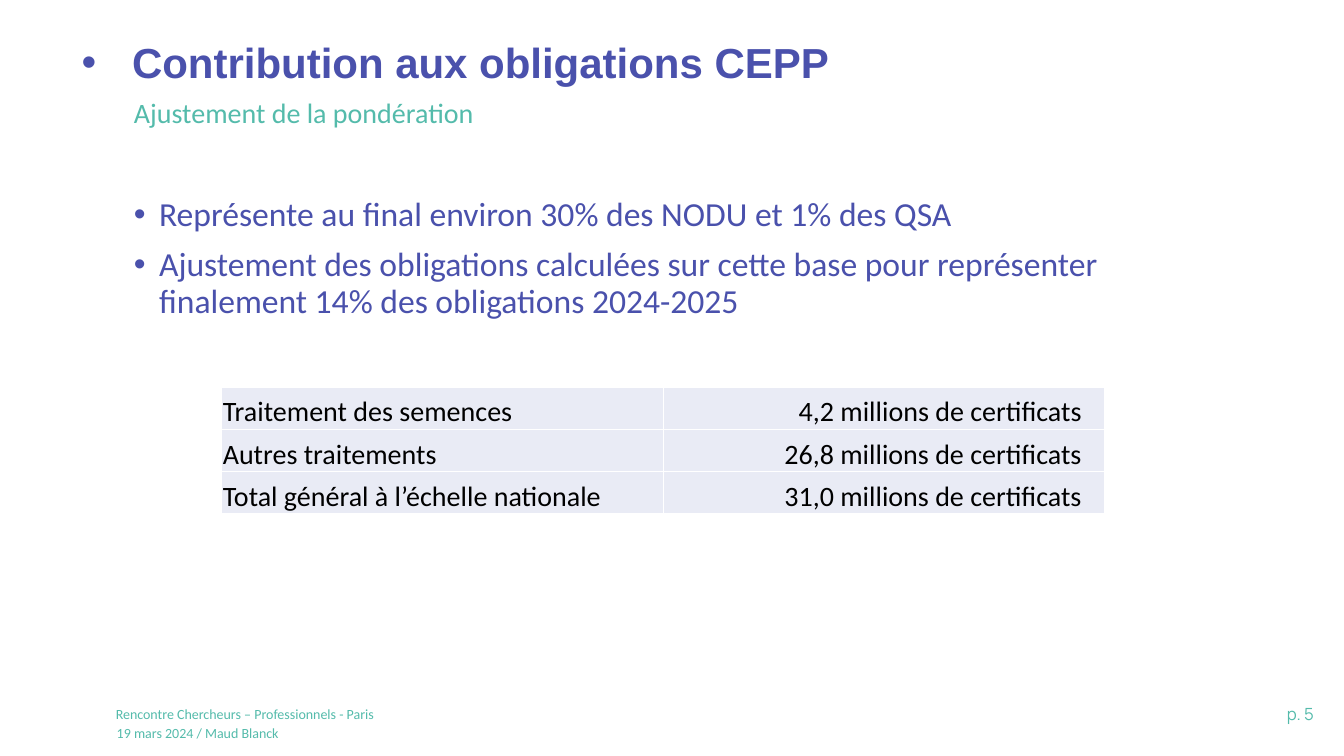
from lxml.etree import SubElement
from pptx import Presentation
from pptx.dml.color import RGBColor
from pptx.enum.text import MSO_ANCHOR as Anchor, PP_ALIGN as Align
from pptx.oxml.ns import qn
from pptx.util import Inches, Pt

INDIGO = RGBColor(0x4A, 0x51, 0xAC)
TEAL = RGBColor(0x54, 0xBB, 0xAB)
BLACK = RGBColor(0x00, 0x00, 0x00)
WHITE = RGBColor(0xFF, 0xFF, 0xFF)
PALE = RGBColor(0xE9, 0xEB, 0xF5)


class SlideBuilder:
    """Holds the text style and the page being filled."""

    base = {"name": "Calibri", "bold": False}

    def __init__(self, page):
        self.page = page

    def add_words(self, para, words, **style):
        span = para.add_run()
        span.text = words
        style = {**self.base, **style}
        span.font.color.rgb = style.pop("color")
        for key, value in style.items():
            setattr(span.font, key, value)

    def bullet(self, para, indent):
        props = para._p.get_or_add_pPr()
        props.set("marL", str(Inches(indent)))
        props.set("indent", str(-Inches(indent)))
        SubElement(props, qn("a:buFont"), typeface="Arial")
        SubElement(props, qn("a:buChar"), char="•")

    def text(self, place, lines, indent=0, frame_format=None,
             para_format=None, **style):
        box = self.page.shapes.add_textbox(*map(Inches, place))
        frame = box.text_frame
        frame.word_wrap = True
        for key, value in (frame_format or {}).items():
            setattr(frame, key, value)
        for index, words in enumerate(lines):
            para = frame.add_paragraph() if index else frame.paragraphs[0]
            if indent:
                self.bullet(para, indent)
            for key, value in (para_format or {}).items():
                setattr(para, key, value)
            if index:
                para.space_before = Pt(10)
            self.add_words(para, words, **style)

    def border(self, cell, color):
        props = cell._tc.get_or_add_tcPr()
        for side in ("a:lnL", "a:lnR", "a:lnT", "a:lnB"):
            line = SubElement(props, qn(side), w=str(Pt(1)))
            fill = SubElement(line, qn("a:solidFill"))
            SubElement(fill, qn("a:srgbClr"), val=str(color))

    def table(self, place, rows, columns, **style):
        """columns holds one (alignment, right margin) pair per column."""
        table = self.page.shapes.add_table(
            len(rows), len(columns), *map(Inches, place)).table
        table.first_row = table.horz_banding = False
        for r, row in enumerate(rows):
            for c, (align, margin) in enumerate(columns):
                cell = table.cell(r, c)
                cell_format = {
                    "vertical_anchor": Anchor.BOTTOM,
                    "margin_left": Inches(0.01),
                    "margin_right": Inches(margin),
                    "margin_top": Inches(0.01),
                    "margin_bottom": 0,
                }
                for key, value in cell_format.items():
                    setattr(cell, key, value)
                self.border(cell, WHITE)
                cell.fill.solid()
                cell.fill.fore_color.rgb = PALE
                para = cell.text_frame.paragraphs[0]
                para.alignment = align
                self.add_words(para, row[c], **style)


def main():
    deck = Presentation()
    deck.slide_width, deck.slide_height = Inches(13.33), Inches(7.5)
    slide = SlideBuilder(deck.slides.add_slide(deck.slide_layouts[6]))
    tight = {"line_spacing": 0.9}

    # Footer
    slide.text((10.85, 6.93, 2.28, 0.3), ["p. 5"], size=Pt(12), color=TEAL,
               name="Manrope", para_format={"alignment": Align.RIGHT})
    footer = {"size": Pt(10), "color": TEAL}
    slide.text((1.05, 6.95, 7.34, 0.28),
               ["Rencontre Chercheurs – Professionnels - Paris"], **footer)
    slide.text((1.06, 7.14, 7.34, 0.28),
               ["19 mars 2024 / Maud Blanck"], **footer)

    # Title and subtitle
    slide.text((0.81, 0.16, 11.17, 0.97),
               ["Contribution aux obligations CEPP"], indent=0.5,
               frame_format={"margin_left": 0,
                             "vertical_anchor": Anchor.MIDDLE},
               para_format=tight, size=Pt(30), color=INDIGO,
               name="Arial", bold=True)
    slide.text((1.23, 0.94, 10.76, 0.74), ["Ajustement de la pondération"],
               para_format=tight, size=Pt(20), color=TEAL)

    # Key points
    slide.text((1.23, 1.91, 10.63, 4.39),
               ["Représente au final environ 30% des NODU et 1% des QSA",
                "Ajustement des obligations calculées sur cette base pour "
                "représenter finalement 14% des obligations 2024-2025"],
               indent=0.25, para_format=tight, size=Pt(24), color=INDIGO)

    # Certificates table
    slide.table((2.2, 3.84, 8.76, 1.26),
                [("Traitement des semences", "4,2 millions de certificats"),
                 ("Autres traitements", "26,8 millions de certificats"),
                 ("Total général à l’échelle nationale",
                  "31,0 millions de certificats")],
                [(Align.LEFT, 0.01), (Align.RIGHT, 0.23)],
                size=Pt(20), color=BLACK)

    deck.save("out.pptx")


if __name__ == "__main__":
    main()
